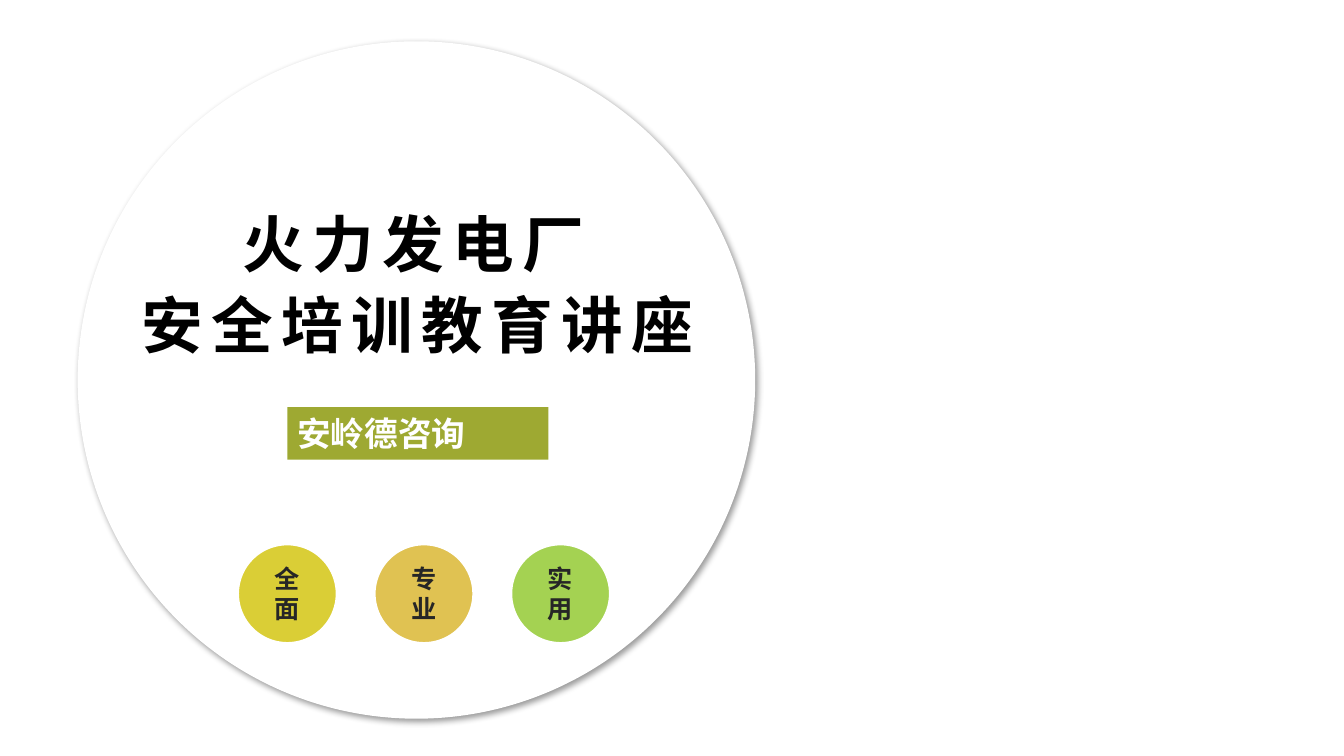
from dataclasses import dataclass

from lxml.etree import SubElement
from pptx import Presentation
from pptx.dml.color import RGBColor
from pptx.enum.shapes import MSO_SHAPE
from pptx.enum.text import MSO_ANCHOR, MSO_AUTO_SIZE, PP_ALIGN
from pptx.oxml.ns import qn
from pptx.util import Inches, Pt


@dataclass(frozen=True)
class Theme:
    white: str = "FFFFFF"
    black: str = "000000"
    ink: str = "262626"
    olive: str = "9EA932"
    badges: tuple = ("DACE36", "E0C252", "A4D252")
    title_font: str = "Noto Sans CJK JP"
    body_font: str = "Noto Sans CJK SC"
    badge_font: str = "Arial"
    title_size: int = 44
    banner_size: int = 24
    badge_size: int = 18


THEME = Theme()


def add_span(para, text, size, color, latin, east_asian):
    span = para.add_run()
    span.text = text
    span.font.size = Pt(size)
    span.font.bold = True
    span.font.color.rgb = RGBColor.from_string(color)
    span.font.name = latin
    SubElement(span.font._element, qn("a:ea"), typeface=east_asian)
    return span


def add_filled(page, kind, left, top, width, height, color):
    shape = page.shapes.add_shape(
        kind, Inches(left), Inches(top), Inches(width), Inches(height))
    shape.shadow.inherit = False
    shape.fill.solid()
    shape.fill.fore_color.rgb = RGBColor.from_string(color)
    shape.line.fill.background()
    shape.text_frame.word_wrap = True
    shape.text_frame.vertical_anchor = MSO_ANCHOR.MIDDLE
    return shape


def add_disc(page, left, top, size):
    disc = add_filled(page, MSO_SHAPE.OVAL, left, top, size, size, THEME.white)
    effects = disc.element.spPr.find(qn("a:effectLst"))
    shadow = SubElement(effects, qn("a:outerShdw"), blurRad=str(Pt(4)),
                        dist=str(Pt(3)), dir=str(45 * 60000),
                        algn="tl", rotWithShape="0")
    color = SubElement(shadow, qn("a:srgbClr"), val=THEME.black)
    SubElement(color, qn("a:alpha"), val="40000")
    page.shapes.title.element.addprevious(disc.element)


def fill_title(page, left, top, width, height, lines):
    title = page.shapes.title
    title.left, title.top = Inches(left), Inches(top)
    title.width, title.height = Inches(width), Inches(height)
    frame = title.text_frame
    frame.word_wrap = True
    frame.auto_size = MSO_AUTO_SIZE.NONE
    frame.vertical_anchor = MSO_ANCHOR.BOTTOM
    frame.margin_left = frame.margin_right = Inches(0.1)
    frame.margin_top, frame.margin_bottom = Inches(0.05), Inches(0)
    para = frame.paragraphs[0]
    para.alignment = PP_ALIGN.CENTER
    para.line_spacing = 1.1
    for index, line in enumerate(lines):
        if index:
            para.add_line_break()
        span = add_span(para, line, THEME.title_size, THEME.black,
                        THEME.title_font, THEME.title_font)
        span.font._element.set("spc", "600")


def add_banner(page, left, top, width, height, text):
    banner = add_filled(page, MSO_SHAPE.RECTANGLE, left, top, width, height,
                        THEME.olive)
    para = banner.text_frame.paragraphs[0]
    para.alignment = PP_ALIGN.JUSTIFY
    add_span(para, text, THEME.banner_size, THEME.white,
             THEME.body_font, THEME.body_font)


def add_badges(page, left, top, width, size, labels):
    step = (width - size) / (len(labels) - 1)
    for index, (label, color) in enumerate(zip(labels, THEME.badges)):
        badge = add_filled(page, MSO_SHAPE.OVAL, left + index * step, top,
                           size, size, color)
        badge.line.color.rgb = RGBColor.from_string(THEME.white)
        badge.line.width = Pt(1.5)
        para = badge.text_frame.paragraphs[0]
        para.alignment = PP_ALIGN.CENTER
        add_span(para, label, THEME.badge_size, THEME.ink,
                 THEME.badge_font, THEME.body_font)


def build_cover(deck, left, top, size):
    page = deck.slides.add_slide(deck.slide_layouts[0])
    subtitle = page.placeholders[1].element
    subtitle.getparent().remove(subtitle)
    page.background.fill.solid()
    page.background.fill.fore_color.rgb = RGBColor.from_string(THEME.white)
    add_disc(page, left, top, size)
    fill_title(page, left - 0.11, top + 1.42, size + 0.24, 1.75,
               ("火力发电厂", "安全培训教育讲座"))
    add_banner(page, left + 2.08, top + 3.63, 2.59, 0.52, "安岭德咨询")
    add_badges(page, left + 1.59, top + 4.99, 3.69, 0.98,
               ("全面", "专业", "实用"))


def main():
    deck = Presentation()
    deck.slide_width, deck.slide_height = Inches(13.33), Inches(7.5)
    build_cover(deck, 0.77, 0.41, 6.72)
    deck.save("out.pptx")


if __name__ == "__main__":
    main()
